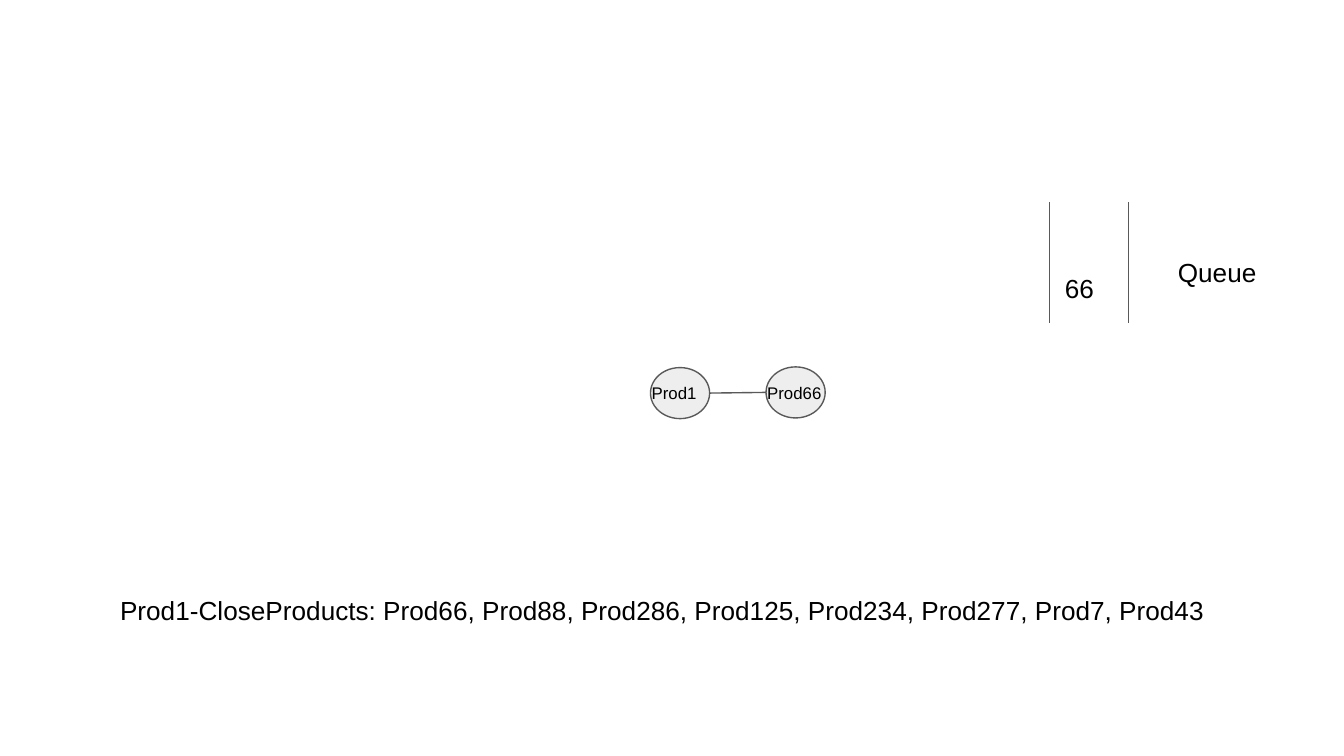
"""Build a slide showing a product graph beside its search queue."""
from dataclasses import dataclass
from typing import Any

from lxml.etree import SubElement
from pptx import Presentation
from pptx.dml.color import RGBColor
from pptx.enum.shapes import MSO_CONNECTOR as Connector, MSO_SHAPE as Shape
from pptx.enum.text import MSO_ANCHOR as Anchor
from pptx.oxml.ns import qn
from pptx.util import Pt

PX = 4572
COLOURS = {"node": "EEEEEE", "line": "595959", "text": "000000"}


@dataclass
class Board:
    """Hold the style and the current slide."""
    page: Any
    font: str = "Arial"
    inset: int = 20
    line_width: float = 0.75

    def colour(self, name):
        return RGBColor.from_string(COLOURS[name])

    def outline(self, item):
        item.line.color.rgb = self.colour("line")
        item.line.width = Pt(self.line_width)

    def node(self, left, top, width, height):
        circle = self.page.shapes.add_shape(
            Shape.OVAL, left * PX, top * PX, width * PX, height * PX)
        circle.shadow.inherit = False
        circle.fill.solid()
        circle.fill.fore_color.rgb = self.colour("node")
        self.outline(circle)

    def line(self, x1, y1, x2, y2):
        line = self.page.shapes.add_connector(
            Connector.STRAIGHT, x1 * PX, y1 * PX, x2 * PX, y2 * PX)
        self.outline(line)
        SubElement(line._element.spPr, qn("a:effectLst"))

    def text(self, words, left, top, width, height,
             size=14, anchor=Anchor.TOP, inset_bottom=20):
        box = self.page.shapes.add_textbox(
            left * PX, top * PX, width * PX, height * PX)
        frame = box.text_frame
        frame.word_wrap = True
        frame.vertical_anchor = anchor
        frame.margin_left = frame.margin_right = self.inset * PX
        frame.margin_top = self.inset * PX
        frame.margin_bottom = inset_bottom * PX
        para = frame.paragraphs[0]
        para.text = words
        para.font.name = self.font
        para.font.size = Pt(size)
        para.font.color.rgb = self.colour("text")


def main():
    deck = Presentation()
    deck.slide_width, deck.slide_height = 2000 * PX, 1125 * PX
    board = Board(deck.slides.add_slide(deck.slide_layouts[6]))

    products = [("Prod1", 968, 547), ("Prod66", 1140, 546)]
    for name, left, top in products:
        board.node(left, top, 88, 76)
    board.line(1056, 585, 1140, 584)
    for name, left, top in products:
        board.text(name, left - 18, top, 124, 76, size=9, anchor=Anchor.MIDDLE)

    board.text("Prod1-CloseProducts: Prod66, Prod88, Prod286, Prod125, "
               "Prod234, Prod277, Prod7, Prod43", 159, 865, 1682, 108)

    for x in (1562, 1679):
        board.line(x, 301, x, 481)
    board.text("Queue", 1733, 362, 176, 76)
    board.text("66", 1565, 294, 124, 168, anchor=Anchor.BOTTOM, inset_bottom=10)

    deck.save("out.pptx")


if __name__ == "__main__":
    main()
